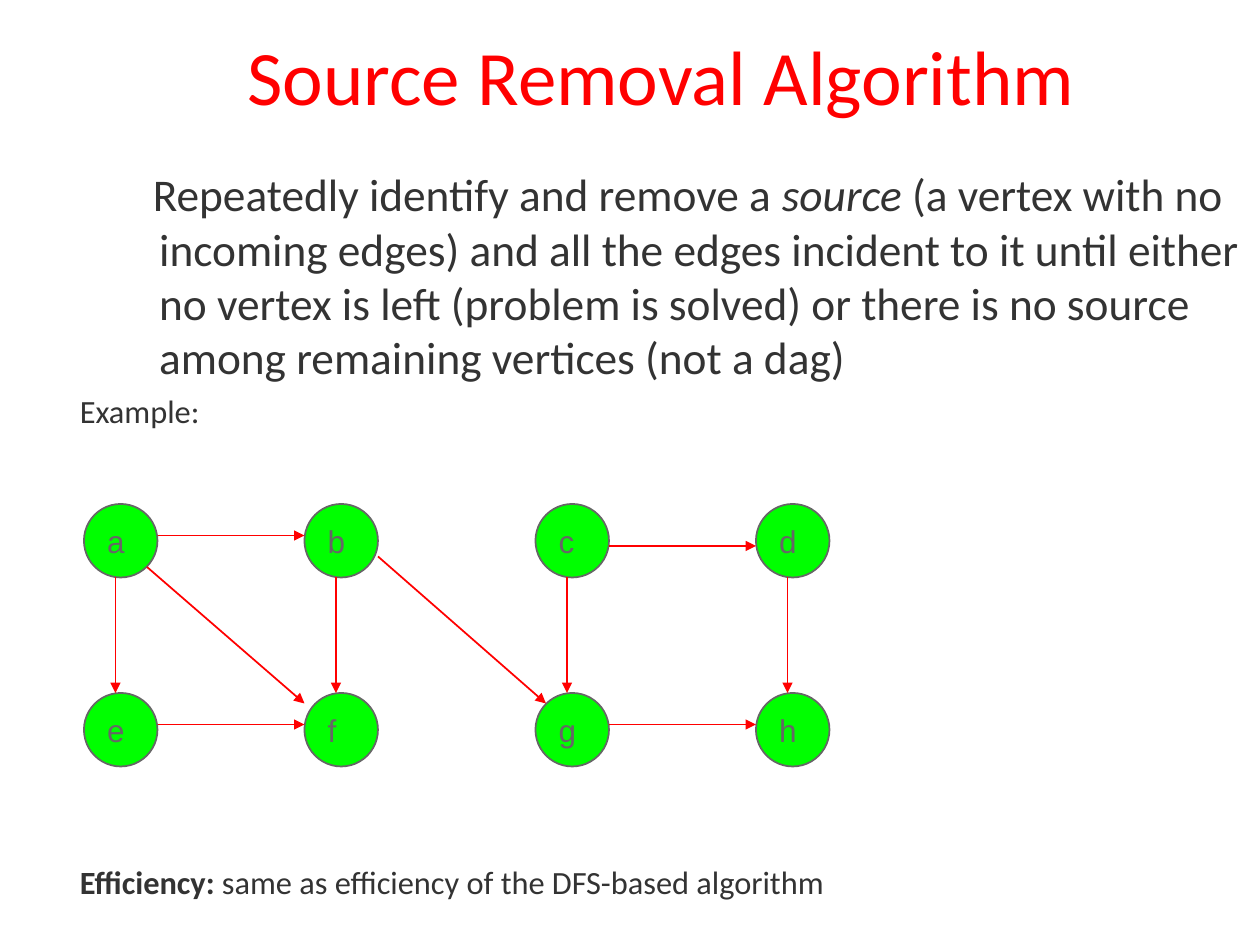
from typing import NamedTuple

from lxml import etree
from pptx import Presentation
from pptx.dml.color import RGBColor
from pptx.enum.shapes import MSO_CONNECTOR, MSO_SHAPE
from pptx.enum.text import MSO_ANCHOR, PP_ALIGN
from pptx.oxml.ns import qn
from pptx.util import Inches, Pt

STRAIGHT = MSO_CONNECTOR.STRAIGHT
ELLIPSE = MSO_SHAPE.OVAL
MIDDLE = MSO_ANCHOR.MIDDLE
CENTER, LEFT = PP_ALIGN.CENTER, PP_ALIGN.LEFT

RED, GREEN, GRAY, DARK = "FF0000", "00FF00", "666666", "333333"

# The slide is a grid of 120 columns by 90 rows, each 1/12 inch
CELL = Inches(1) // 12
SLIDE_COLUMNS, SLIDE_ROWS = 120, 90
VERTEX_SIZE = 7
VERTEX_COLUMNS = (8, 29, 51, 72)
VERTEX_ROWS = {48: "abcd", 66: "efgh"}

# Where edges touch a vertex, as (column, row) from its top left corner
RIGHT, LOWER_RIGHT, ENTRY_LEFT, LOWER_LEFT = (7, 3), (7, 4), (0, 3), (0, 4)
BOTTOM, TOP = (3, 7), (3, 0)
UPPER_CORNER = (0, 1)


class Edge(NamedTuple):
    source: str
    target: str
    leave: tuple[int, int]
    enter: tuple[int, int]


class TextRun(NamedTuple):
    text: str
    bold: bool = False
    italic: bool = False


class BodyParagraph(NamedTuple):
    runs: tuple[TextRun, ...]
    size: float
    margin: float = 0
    indent: float = 0
    space_before: float = 0


EDGES = (
    *(Edge(a, b, RIGHT, ENTRY_LEFT) for a, b in ("ab", "ef", "gh")),
    *(Edge(a, b, BOTTOM, TOP) for a, b in ("ae", "bf", "cg", "dh")),
    Edge("c", "d", LOWER_RIGHT, LOWER_LEFT),
    Edge("a", "f", (6, 6), UPPER_CORNER),
    Edge("b", "g", (7, 5), (1, 1)),
)

BODY = (
    BodyParagraph((
        TextRun("Repeatedly identify and remove a "),
        TextRun("source", italic=True),
        TextRun(" (a vertex with no incoming edges) and all the edges incident "
                "to it until either no vertex is left (problem is solved) or "
                "there is no source among remaining vertices (not a dag)"),
    ), 25.9, margin=0.63, indent=-0.05),
    BodyParagraph((TextRun("Example:"),), 18.5, space_before=4),
    BodyParagraph((
        TextRun("Efficiency:", bold=True),
        TextRun(" same as efficiency of the DFS-based algorithm"),
    ), 18.5, space_before=247),
)


def color(value: str) -> RGBColor:
    return RGBColor.from_string(value)


def style_font(font, name: str, size: float, fill: str) -> None:
    font.name, font.size = name, Pt(size)
    font.color.rgb = color(fill)


def add_title(slide, text: str) -> None:
    box = slide.shapes.add_textbox(8 * CELL, Inches(0.22), 110 * CELL, 9 * CELL)
    frame = box.text_frame
    frame.word_wrap, frame.vertical_anchor = True, MIDDLE
    frame.text = text
    paragraph = frame.paragraphs[0]
    paragraph.alignment = CENTER
    style_font(paragraph.runs[0].font, "Calibri", 44, RED)


def add_body(slide, items: tuple[BodyParagraph, ...]) -> None:
    box = slide.shapes.add_textbox(7 * CELL, 15 * CELL, 113 * CELL, 72 * CELL)
    frame = box.text_frame
    frame.word_wrap = True
    frame.margin_left, frame.margin_top = Inches(0.05), Inches(0.07)
    frame.margin_right = frame.margin_bottom = Inches(0.02)
    for index, item in enumerate(items):
        paragraph = frame.add_paragraph() if index else frame.paragraphs[0]
        properties = paragraph._p.get_or_add_pPr()
        properties.set("marL", str(Inches(item.margin)))
        properties.set("indent", str(Inches(item.indent)))
        if index:
            paragraph.space_before = Pt(item.space_before)
        for part in item.runs:
            run = paragraph.add_run()
            run.text = part.text
            style_font(run.font, "Calibri", item.size, DARK)
            run.font.bold, run.font.italic = part.bold, part.italic


def add_vertex(slide, label: str, column: int, row: int) -> None:
    size = VERTEX_SIZE * CELL
    shape = slide.shapes.add_shape(ELLIPSE, column * CELL, row * CELL, size, size)
    shape.shadow.inherit = False
    shape.fill.solid()
    shape.fill.fore_color.rgb = color(GREEN)
    shape.line.color.rgb = color(GRAY)
    shape.line.width = Pt(1)
    frame = shape.text_frame
    frame.word_wrap, frame.vertical_anchor = False, MIDDLE
    frame.text = label
    paragraph = frame.paragraphs[0]
    paragraph.alignment = LEFT
    style_font(paragraph.runs[0].font, "Arial", 18, GRAY)


def add_edge(slide, edge: Edge, corners: dict[str, tuple[int, int]]) -> None:
    ends = ((edge.source, edge.leave), (edge.target, edge.enter))
    points = [(start + offset) * CELL for name, offsets in ends
              for start, offset in zip(corners[name], offsets)]
    connector = slide.shapes.add_connector(STRAIGHT, *points)
    connector.line.color.rgb = color(RED)
    connector.line.width = Pt(1)
    # Arrowhead and no shadow
    line = connector.line._get_or_add_ln()
    etree.SubElement(line, qn("a:tailEnd"), type="triangle")
    etree.SubElement(connector._element.spPr, qn("a:effectLst"))


def main() -> None:
    presentation = Presentation()
    presentation.slide_width = SLIDE_COLUMNS * CELL
    presentation.slide_height = SLIDE_ROWS * CELL
    slide = presentation.slides.add_slide(presentation.slide_layouts[6])

    # Text
    add_title(slide, "Source Removal Algorithm")
    add_body(slide, BODY)

    # Example graph
    corners = {label: (column, row) for row, labels in VERTEX_ROWS.items()
               for label, column in zip(labels, VERTEX_COLUMNS)}
    for label, (column, row) in corners.items():
        add_vertex(slide, label, column, row)
    for edge in EDGES:
        add_edge(slide, edge, corners)

    presentation.save("out.pptx")


if __name__ == "__main__":
    main()
